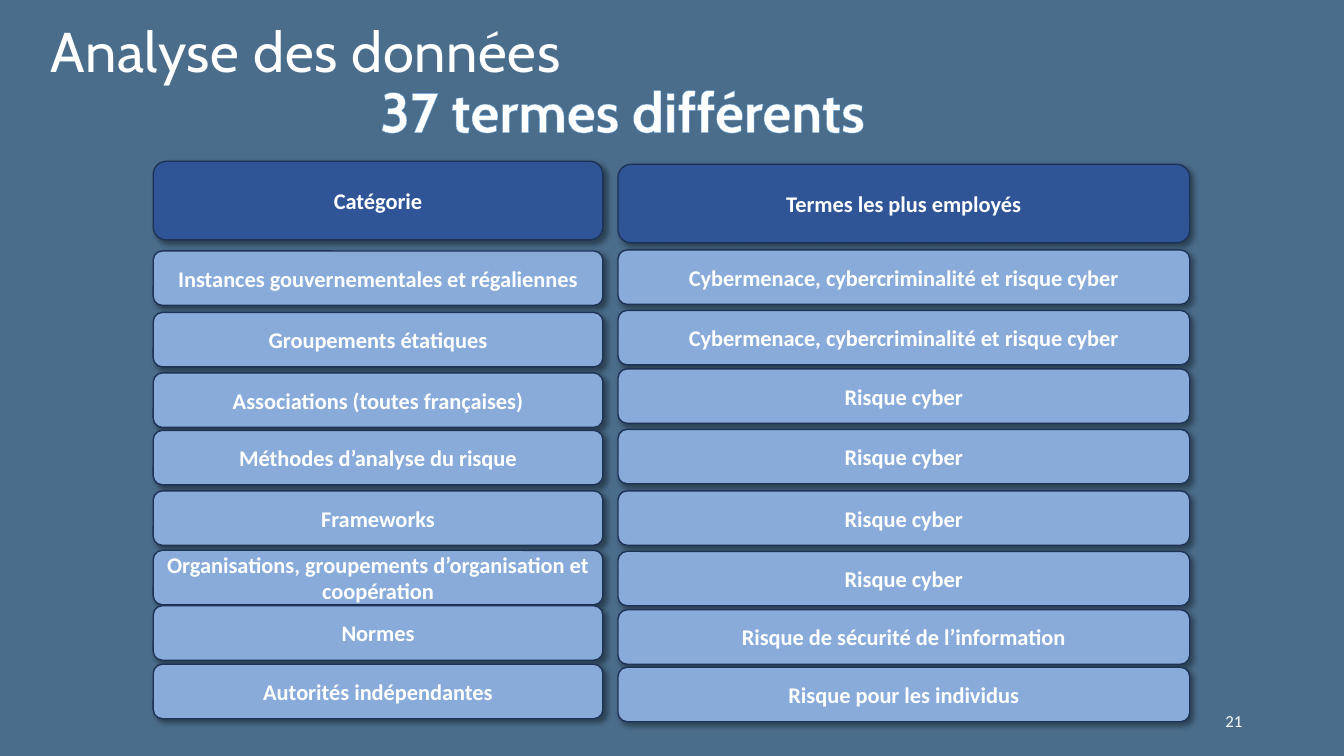
from lxml import etree
from pptx import Presentation
from pptx.dml.color import RGBColor
from pptx.enum.dml import MSO_THEME_COLOR as THEME
from pptx.enum.shapes import MSO_SHAPE as SHAPE
from pptx.enum.text import MSO_ANCHOR as ANCHOR, PP_ALIGN as ALIGN
from pptx.oxml import parse_xml
from pptx.oxml.ns import nsdecls, qn
from pptx.util import Inches, Pt

BACKGROUND, WHITE = "4A6D8C", "FFFFFF"
HEADER_FILL, ROW_FILL, BORDER = "2F5597", "89ABD9", "1E3256"
HEADER_H, ROW_H = 0.78, 0.54

# Heading and (top, text) rows of each column
CATEGORIES = [
    (2.49, "Instances gouvernementales et régaliennes"),
    (3.1, "Groupements étatiques"),
    (3.7, "Associations (toutes françaises)"),
    (4.27, "Méthodes d’analyse du risque"),
    (4.87, "Frameworks"),
    (5.46, "Organisations, groupements d’organisation et coopération"),
    (6.01, "Normes"),
    (6.59, "Autorités indépendantes"),
]
TERMS = [
    (2.48, "Cybermenace, cybercriminalité et risque cyber"),
    (3.08, "Cybermenace, cybercriminalité et risque cyber"),
    (3.66, "Risque cyber"),
    (4.26, "Risque cyber"),
    (4.87, "Risque cyber"),
    (5.47, "Risque cyber"),
    (6.05, "Risque de sécurité de l’information"),
    (6.62, "Risque pour les individus"),
]


def rgb(color):
    return RGBColor.from_string(color)


def style(p, font, size, bold=False, align=ALIGN.LEFT):
    p.alignment = align
    p.font.name, p.font.size, p.font.bold = font, Pt(size), bold
    p.font.color.rgb = rgb(WHITE)


def add_text_box(slide, x, y, w, h):
    box = slide.shapes.add_textbox(Inches(x), Inches(y), Inches(w), Inches(h))
    tf = box.text_frame
    tf.word_wrap = True
    tf.vertical_anchor = ANCHOR.MIDDLE
    return tf


def add_title(slide, x, y, w, h):
    tf = add_text_box(slide, x, y, w, h)
    p = tf.paragraphs[0]
    r = p.add_run()
    r.text = "Analyse des données"
    r.font._element.set("spc", "50")

    # Indented second line with outlined letters
    count = tf.add_paragraph()
    count._p.get_or_add_pPr().set("marL", str(Inches(3.27)))
    r = count.add_run()
    r.text = "37 termes différents"
    r.font.color.theme_color = THEME.BACKGROUND_1
    r.font._element.insert(0, parse_xml(
        f'<a:ln {nsdecls("a")} w="{Pt(0.8)}"><a:solidFill>'
        '<a:srgbClr val="5B9BD5"/></a:solidFill></a:ln>'))
    for line, bold in ((p, False), (count, True)):
        style(line, "Cabin", 40, bold)
        line.line_spacing = 0.9


def add_shadow(s):
    s.shadow.inherit = False
    effects = s._element.spPr.find(qn("a:effectLst"))
    shadow = etree.SubElement(
        effects, qn("a:outerShdw"), blurRad=str(Pt(4)), dist=str(Pt(3)),
        dir=str(45 * 60000), algn="tl", rotWithShape="0")
    color = etree.SubElement(shadow, qn("a:srgbClr"), val="000000")
    etree.SubElement(color, qn("a:alpha"), val="40000")


def add_cell(slide, x, y, w, h, text, fill):
    s = slide.shapes.add_shape(SHAPE.ROUNDED_RECTANGLE, Inches(x), Inches(y),
                               Inches(w), Inches(h))
    s.fill.solid()
    s.fill.fore_color.rgb = rgb(fill)
    s.line.color.rgb = rgb(BORDER)
    s.line.width = Pt(1)
    add_shadow(s)
    tf = s.text_frame
    tf.word_wrap = True
    tf.vertical_anchor = ANCHOR.MIDDLE
    tf.text = text
    style(tf.paragraphs[0], "Calibri", 16, True, ALIGN.CENTER)


def add_column(slide, x, y, w, heading, rows):
    add_cell(slide, x, y, w, HEADER_H, heading, HEADER_FILL)
    for top, text in rows:
        add_cell(slide, x, top, w, ROW_H, text, ROW_FILL)


def add_page_number(slide, x, y, w, h):
    tf = add_text_box(slide, x, y, w, h)
    tf.text = "21"
    style(tf.paragraphs[0], "Calibri", 12, align=ALIGN.RIGHT)


def main():
    prs = Presentation()
    prs.slide_width, prs.slide_height = Inches(13.33), Inches(7.5)
    slide = prs.slides.add_slide(prs.slide_layouts[6])
    slide.background.fill.solid()
    slide.background.fill.fore_color.rgb = rgb(BACKGROUND)

    add_title(slide, 0.4, 0.11, 11.5, 1.45)
    add_column(slide, 1.52, 1.6, 4.46, "Catégorie", CATEGORIES)
    add_column(slide, 6.13, 1.63, 5.67, "Termes les plus employés", TERMS)
    add_page_number(slide, 9.42, 6.95, 3, 0.4)
    prs.save("out.pptx")


if __name__ == "__main__":
    main()
